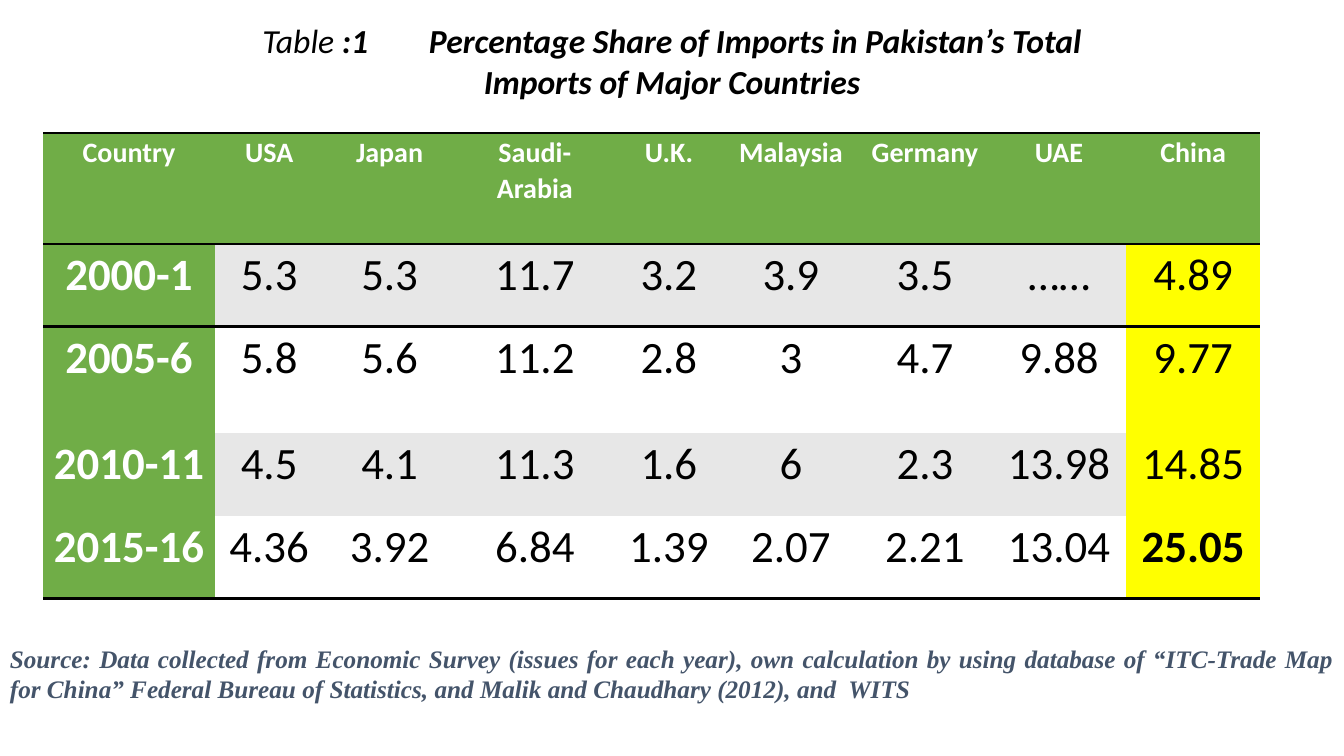
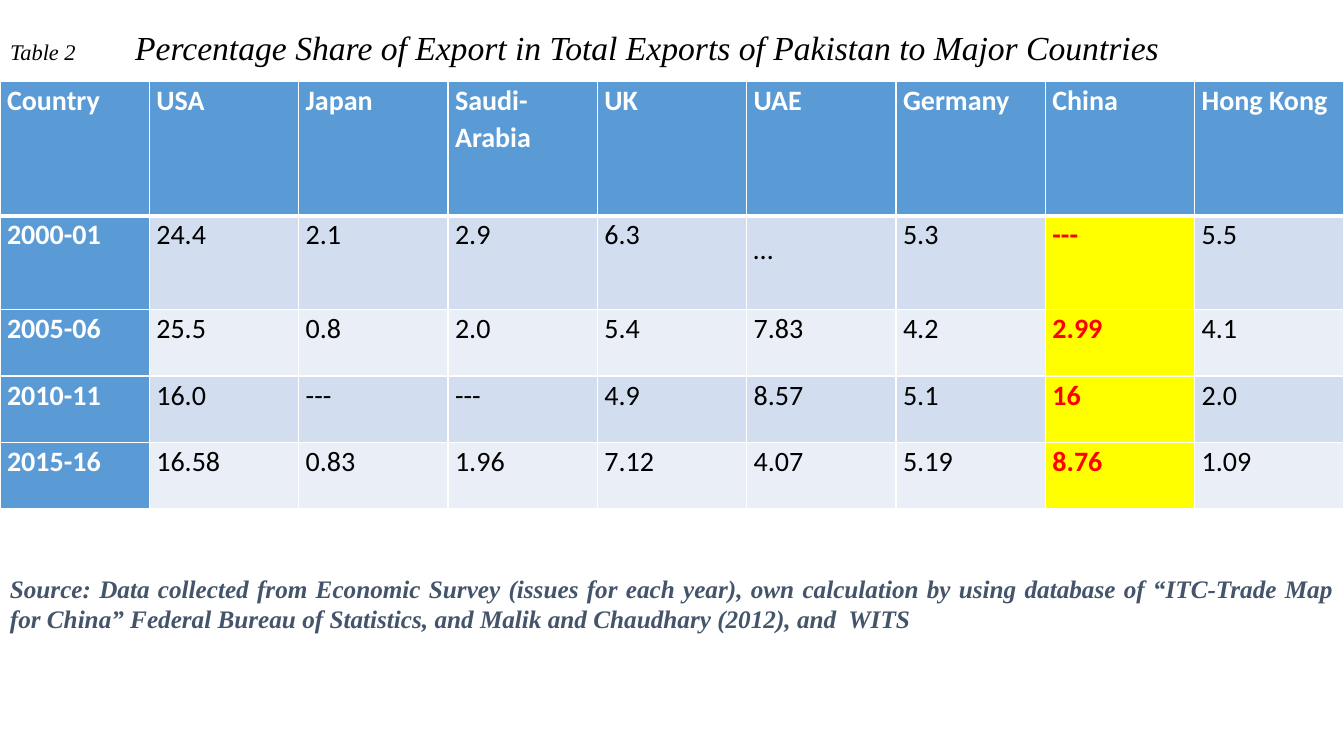
import dataclasses

import pptx
import pptx.dml.color
import pptx.enum.text
import pptx.oxml
import pptx.oxml.ns
import pptx.util

ALIGN = pptx.enum.text.PP_ALIGN
ANCHOR = pptx.enum.text.MSO_ANCHOR
IN = pptx.util.Inches
WIDTH, HEIGHT = 13.33, 7.5
PLAIN_TABLE = "{2D5ABB26-0587-4C30-8999-92F81FD0307C}"


@dataclasses.dataclass(frozen=True)
class Theme:
    sans: str = "Calibri"
    serif: str = "Times New Roman"
    black: str = "000000"
    white: str = "FFFFFF"
    slate: str = "44546A"
    red: str = "FF0000"
    yellow: str = "FFFF00"
    green: str = "70AD47"
    grey: str = "E7E7E7"
    blue: str = "5B9BD5"
    blue_bands: tuple = ("D2DEEF", "EAEFF7")
    title_size: int = 24
    label_size: int = 16
    source_size: int = 18
    header_size: int = 20
    large_size: int = 32


T = Theme()

SOURCE = ("Source: Data collected from Economic Survey (issues for each year), "
          "own calculation by using database of “ITC-Trade Map for China” "
          "Federal Bureau of Statistics, and Malik and Chaudhary (2012), and  WITS")

# Title runs are (text, size, bold, letter spacing in points).
IMPORTS = dict(
    title=[("Table ", T.title_size, False, 0), (":1", T.title_size, True, 0),
           (" ", T.title_size, True, 38),
           ("Percentage Share of Imports in Pakistan’s Total Imports of Major Countries",
            T.title_size, True, 0)],
    title_box=(1.94, 0.15, 9.45, 1), title_font=T.sans, title_align=ALIGN.CENTER,
    table_at=(0.43, 1.32), source_top=6.33,
    columns=[1.7, 1.08, 1.31, 1.57, 1.09, 1.33, 1.33, 1.33, 1.33],
    row_heights=[1.1, 0.82, 1.06, 0.82, 0.82],
    rows=[
        ["Country", "USA", "Japan", "Saudi- Arabia", "U.K.", "Malaysia", "Germany", "UAE", "China"],
        ["2000-1", "5.3", "5.3", "11.7", "3.2", "3.9", "3.5", "……", "4.89"],
        ["2005-6", "5.8", "5.6", "11.2", "2.8", "3", "4.7", "9.88", "9.77"],
        ["2010-11", "4.5", "4.1", "11.3", "1.6", "6", "2.3", "13.98", "14.85"],
        ["2015-16", "4.36", "3.92", "6.84", "1.39", "2.07", "2.21", "13.04", "25.05"],
    ],
    accent=T.green, bands=(T.grey, T.white), body_size=T.large_size,
    align=ALIGN.CENTER, highlight_color=T.black, bold_values={"25.05"},
    line_color=T.black, sides="", rules={0: 2, 1: 2, 5: 2}, spacing={},
)

EXPORTS = dict(
    title=[("Table 2", T.label_size, False, 0), ("\t", T.label_size, False, 0),
           ("Percentage Share of Export in Total Exports of Pakistan to Major Countries",
            T.title_size, False, 0)],
    title_box=(0, 0.22, WIDTH, 0.5), title_font=T.serif, title_align=ALIGN.LEFT, title_tab=1.24,
    table_at=(0, 0.81), source_top=5.64,
    columns=[WIDTH / 9] * 9,
    row_heights=[1.33, 0.93, 0.66, 0.66, 0.66],
    rows=[
        ["Country", "USA", "Japan", "Saudi-Arabia", "UK", "UAE", "Germany", "China", "Hong Kong"],
        ["2000-01", "24.4", "2.1", "2.9", "6.3", "…", "5.3", "---", "5.5"],
        ["2005-06", "25.5", "0.8", "2.0", "5.4", "7.83", "4.2", "2.99", "4.1"],
        ["2010-11", "16.0", "---", "---", "4.9", "8.57", "5.1", "16", "2.0"],
        ["2015-16", "16.58", "0.83", "1.96", "7.12", "4.07", "5.19", "8.76", "1.09"],
    ],
    accent=T.blue, bands=T.blue_bands, body_size=T.header_size,
    align=ALIGN.JUSTIFY, highlight_color=T.red, bold_values={"---", "2.99", "16", "8.76"},
    line_color=T.white, sides="LR", rules={0: 1, 1: 3, 2: 1, 3: 1, 4: 1, 5: 1},
    spacing={"…": 1.5},
)


def rgb(color):
    return pptx.dml.color.RGBColor.from_string(color)


def set_font(font, name, size, color, bold=None, italic=None):
    font.name, font.bold, font.italic = name, bold, italic
    font.size = pptx.util.Pt(size)
    font.color.rgb = rgb(color)


def add_border(cell, side, color, points):
    """Draw one side (L, R, T or B); call before the cell is filled."""
    line = pptx.oxml.parse_xml(
        f'<a:ln{side} {pptx.oxml.ns.nsdecls("a")} w="{points * 12700}">'
        f'<a:solidFill><a:srgbClr val="{color}"/></a:solidFill></a:ln{side}>')
    cell._tc.get_or_add_tcPr().append(line)


def add_title(s, c):
    sp = s.shapes.title
    sp.left, sp.top, sp.width, sp.height = map(IN, c["title_box"])
    tf = sp.text_frame
    tf.auto_size = pptx.enum.text.MSO_AUTO_SIZE.NONE
    tf.vertical_anchor = ANCHOR.TOP
    p = tf.paragraphs[0]
    p.alignment = c["title_align"]
    if "title_tab" in c:
        p._p.get_or_add_pPr().append(pptx.oxml.parse_xml(
            f'<a:tabLst {pptx.oxml.ns.nsdecls("a")}>'
            f'<a:tab pos="{IN(c["title_tab"])}" algn="l"/></a:tabLst>'))
    for text, size, bold, tracking in c["title"]:
        r = p.add_run()
        r.text = text
        set_font(r.font, c["title_font"], size, T.black, bold, True)
        if tracking:
            r.font._element.set("spc", str(tracking * 100))


def add_cell(cell, text, row, col, c):
    highlighted = c["rows"][0][col] == "China"
    if row == 0 or col == 0:
        fill, color, bold = c["accent"], T.white, True
    elif highlighted:
        fill, color, bold = T.yellow, c["highlight_color"], text in c["bold_values"]
    else:
        fill, color, bold = c["bands"][(row - 1) % 2], T.black, False

    for side in c["sides"]:
        add_border(cell, side, c["line_color"], 1)
    for side, rule in (("T", row), ("B", row + 1)):
        if rule in c["rules"]:
            add_border(cell, side, c["line_color"], c["rules"][rule])
    cell.fill.solid()
    cell.fill.fore_color.rgb = rgb(fill)
    cell.margin_left = cell.margin_right = IN(0.07)
    cell.margin_top = cell.margin_bottom = 0
    cell.vertical_anchor = ANCHOR.TOP
    cell.text = text
    p = cell.text_frame.paragraphs[0]
    p.alignment = c["align"]
    p.line_spacing = c["spacing"].get(text, 1.07)
    set_font(p.font, T.sans, c["body_size"] if row else T.header_size, color, bold)


def add_share_table(s, c):
    left, top = c["table_at"]
    table = s.shapes.add_table(
        len(c["rows"]), len(c["columns"]), IN(left), IN(top),
        IN(sum(c["columns"])), IN(sum(c["row_heights"]))).table
    table.first_row = table.horz_banding = False
    table._tbl.tblPr.find(pptx.oxml.ns.qn("a:tableStyleId")).text = PLAIN_TABLE
    for column, width in zip(table.columns, c["columns"]):
        column.width = IN(width)
    for row, height in zip(table.rows, c["row_heights"]):
        row.height = IN(height)
    for i, values in enumerate(c["rows"]):
        for j, text in enumerate(values):
            add_cell(table.cell(i, j), text, i, j, c)


def add_source(s, top):
    tf = s.shapes.add_textbox(0, IN(top), IN(WIDTH), IN(0.71)).text_frame
    tf.word_wrap = True
    p = tf.paragraphs[0]
    p.text = SOURCE
    p.alignment = ALIGN.JUSTIFY
    p.space_after = pptx.util.Pt(10)
    set_font(p.font, T.serif, T.source_size, T.slate, True, True)


def main():
    prs = pptx.Presentation()
    prs.slide_width, prs.slide_height = IN(WIDTH), IN(HEIGHT)
    for c in (IMPORTS, EXPORTS):
        s = prs.slides.add_slide(prs.slide_layouts[5])
        add_title(s, c)
        add_share_table(s, c)
        add_source(s, c["source_top"])
    prs.save("out.pptx")


if __name__ == "__main__":
    main()
